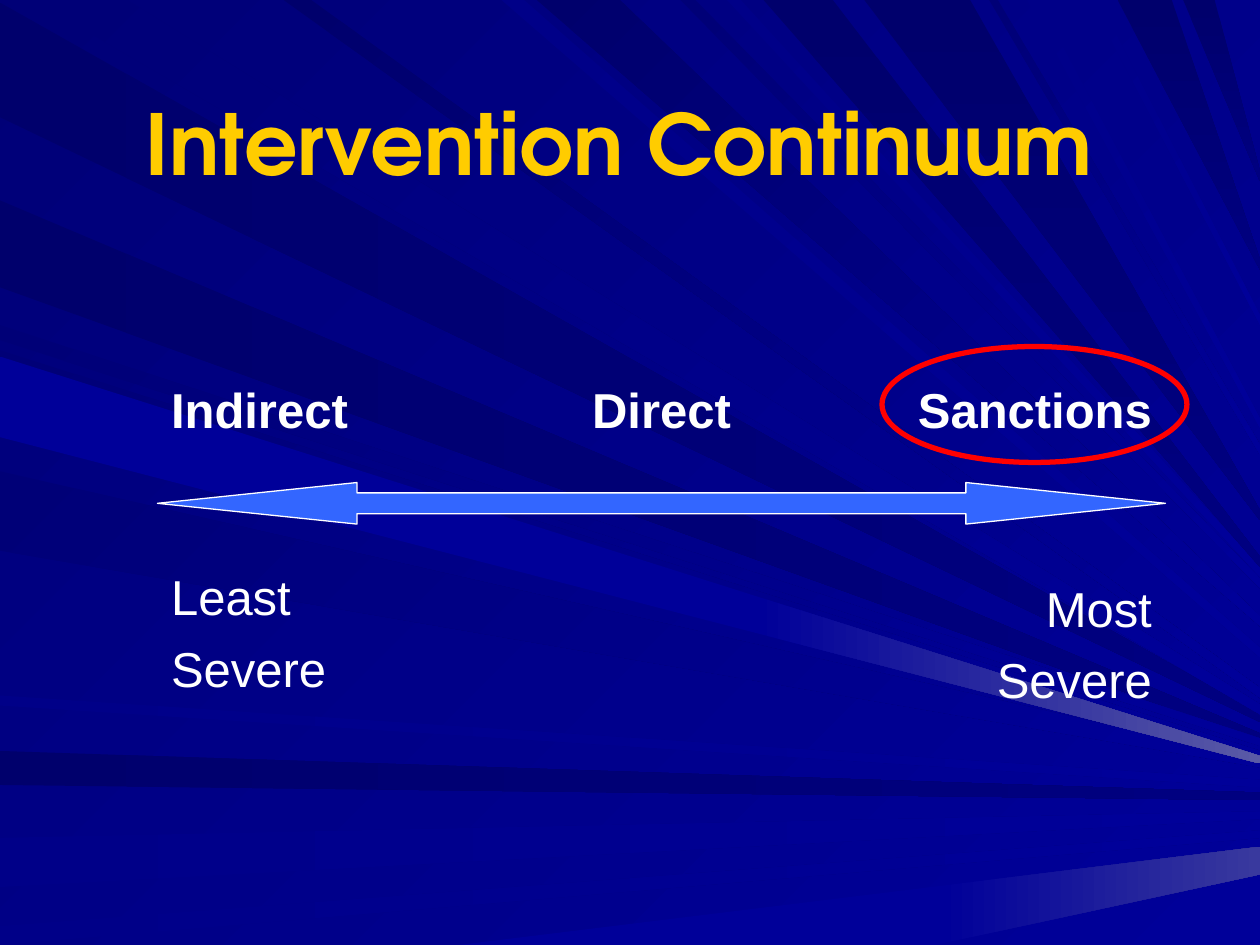
from pptx import Presentation
from pptx.dml.color import RGBColor
from pptx.enum.shapes import MSO_SHAPE as SHAPE
from pptx.enum.text import MSO_ANCHOR as ANCHOR, MSO_AUTO_SIZE as AUTO, PP_ALIGN as ALIGN
from pptx.util import Pt

PX = 9144  # EMU per px, 100 px to the inch
W, H = 1000, 750

DARK, DIM, SOFT = (RGBColor.from_string(c) for c in ("00006C", "000077", "000088"))
NAVY, ROYAL = RGBColor.from_string("000080"), RGBColor.from_string("000099")
HAZE, GLOW = RGBColor.from_string("39399E"), RGBColor.from_string("5A5AA6")
GOLD, WHITE = RGBColor.from_string("FFCC00"), RGBColor.from_string("FFFFFF")
RED, ARROW_BLUE = RGBColor.from_string("FF0000"), RGBColor.from_string("3366FF")

TITLE = "Intervention Continuum"
MARGIN, COLUMN_W = 126, 266
ALIGNS = (ALIGN.LEFT, ALIGN.CENTER, ALIGN.RIGHT)
# column, top, height, bold, lines
LABELS = [
    (2, 450, 150, False, ["Most", "Severe"]),
    (0, 441, 150, False, ["Least", "Severe"]),
    (2, 292, 94, True, ["Sanctions"]),
    (1, 292, 94, True, ["Direct"]),
    (0, 292, 94, True, ["Indirect"]),
]

# Rays run from a slide edge to the right edge.
# edge, first colour, last colour, clockwise angle, gradient start,
# then for each ray: start, end along the edge, and height on the right edge
RAYS = [
    ("left", DARK, NAVY, 0, 0, [(2, 93, 570), (596, 623, 632), (159, 228, 585)]),
    ("top", DIM, ROYAL, 45, 0, [(26, 101, 563), (540, 552, 463), (785, 792, 357)]),
    ("left", SOFT, ROYAL, 0, 0, [(665, 704, 647), (735, 750, 662), (552, 560, 622)]),
    ("bottom", ROYAL, HAZE, 0, 0.6, [(364, 742, 683)]),
    ("top", DARK, ROYAL, 45, 0, [(426, 492, 493), (225, 247, 550)]),
    ("top", SOFT, ROYAL, 45, 0, [(398, 416, 518), (577, 588, 454), (815, 824, 336), (865, 872, 254)]),
    ("top", DARK, NAVY, 90, 0, [(606, 661, 446), (686, 770, 409), (887, 930, 210), (939, 964, 140)]),
    ("left", DIM, ROYAL, 45, 0, [(258, 270, 589), (278, 342, 599), (374, 437, 606)]),
    ("left", ROYAL, GLOW, 0, 0.6, [(283, 347, 603)]),
]
SPREAD = {"left": 3, "top": 4, "bottom": 11}  # half width at the right edge


def box(*lengths):
    return [n * PX for n in lengths]


def paint(fill, first, last, angle, start=0):
    fill.gradient()
    fill.gradient_angle = -angle % 360  # python-pptx counts anticlockwise
    stops = fill.gradient_stops
    stops[0].position = start
    for stop, color in zip(stops, (first, last)):
        stop.color.rgb = color


def add_ray(group, edge, begin, end, height):
    if edge == "left":
        base = [(0, begin), (0, end)]
    else:
        y = 0 if edge == "top" else H
        base = [(begin, y), (end, y)]
    upper, lower = (W, height - SPREAD[edge]), (W, height + SPREAD[edge])
    tip = [upper, lower] if edge == "top" else [lower, upper]
    builder = group.shapes.build_freeform(*base[0], scale=PX)
    builder.add_line_segments(base[1:] + tip, close=True)
    sp = builder.convert_to_shape()
    sp.shadow.inherit = False
    sp.line.fill.background()
    return sp


def write(p, text, font, size, color, bold, align):
    p.alignment = align
    r = p.add_run()
    r.text = text
    r.font.name, r.font.size, r.font.bold = font, Pt(size), bold
    r.font.color.rgb = color


def add_outlined(s, kind, place, color, width):
    sp = s.shapes.add_shape(kind, *box(*place))
    sp.shadow.inherit = False
    sp.line.color.rgb = color
    sp.line.width = Pt(width)
    return sp


def main():
    prs = Presentation()
    prs.slide_width, prs.slide_height = box(W, H)
    s = prs.slides.add_slide(prs.slide_layouts[5])

    # Background and rays
    paint(s.background.fill, DIM, ROYAL, 45)
    group = s.shapes.add_group_shape()
    for edge, first, last, angle, start, rays in RAYS:
        for ray in rays:
            paint(add_ray(group, edge, *ray).fill, first, last, angle, start)

    # Labels above and below the arrow
    for column, top, height, bold, lines in LABELS:
        left = MARGIN + column * COLUMN_W
        sp = s.shapes.add_textbox(*box(left, top, COLUMN_W, height))
        tf = sp.text_frame
        tf.word_wrap = True
        tf.margin_top = 9 * PX
        for i, line in enumerate(lines):
            p = tf.add_paragraph() if i else tf.paragraphs[0]
            if i:
                p.space_before = Pt(7)
            write(p, line, "Arial", 28, WHITE, bold, ALIGNS[column])

    # Severity arrow and the ring around the last stage
    arrow = add_outlined(s, SHAPE.LEFT_RIGHT_ARROW, (125, 383, 800, 33), WHITE, 0.75)
    arrow.adjustments[0], arrow.adjustments[1] = 0.5, 4.8
    arrow.fill.solid()
    arrow.fill.fore_color.rgb = ARROW_BLUE
    ring = add_outlined(s, SHAPE.OVAL, (700, 275, 242, 92), RED, 3)
    ring.fill.background()

    # Title, brought in front of the rays
    title = s.shapes.title
    title.left, title.top, title.width, title.height = box(75, 68, 833, 90)
    tf = title.text_frame
    tf.auto_size, tf.vertical_anchor = AUTO.NONE, ANCHOR.MIDDLE
    write(tf.paragraphs[0], TITLE, "TeX Gyre Adventor", 48, GOLD, True, ALIGN.CENTER)
    s.shapes._spTree.append(title._element)

    prs.save("out.pptx")


if __name__ == "__main__":
    main()
